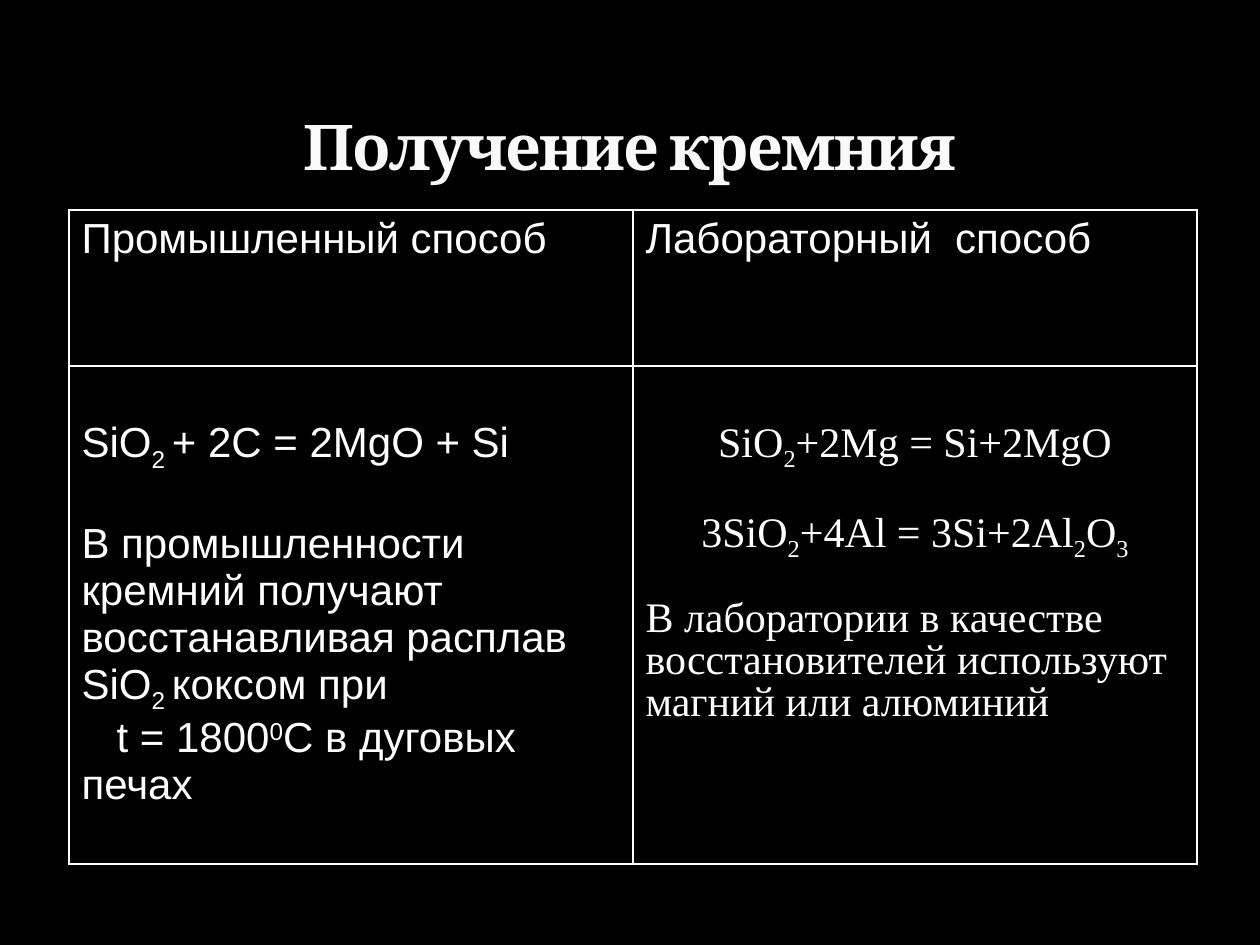
from dataclasses import dataclass

from lxml import etree
from pptx import Presentation
from pptx.dml.color import RGBColor
from pptx.enum.text import MSO_ANCHOR, PP_ALIGN
from pptx.oxml.ns import qn
from pptx.util import Emu, Pt

LEFT, CENTER = PP_ALIGN.LEFT, PP_ALIGN.CENTER
BOTTOM = MSO_ANCHOR.BOTTOM
PX = 914400 // 126
COLORS = {"background": "000000", "title": "F9F9F9", "text": "FFFFFF", "border": "FFFFFF"}
SUB, SUP = -25000, 30000
BORDER_PT = 1


@dataclass
class Para:
    runs: list  # plain strings or (text, baseline) pairs
    align: PP_ALIGN = LEFT
    before: int = 0
    spacing: float = 1.0
    indent: int = 0


@dataclass
class CellText:
    paras: list
    font: str = "Arial"
    top: int = 6


def px(n: int) -> Emu:
    return Emu(n * PX)


def color(name: str) -> RGBColor:
    return RGBColor.from_string(COLORS[name])


def add_run(p, text: str, *, font: str, size: int, fill: str, bold=False, baseline=0, spacing=0):
    r = p.add_run()
    r.text = text
    f = r.font
    f.name, f.size, f.bold = font, Pt(size), bold
    f.color.rgb = color(fill)
    rPr = r._r.get_or_add_rPr()
    if baseline:
        rPr.set("baseline", str(baseline))
    if spacing:
        rPr.set("spc", str(spacing))


def add_borders(cell) -> None:
    tcPr = cell._tc.get_or_add_tcPr()
    for i, side in enumerate(("lnL", "lnR", "lnT", "lnB")):
        ln = etree.Element(qn(f"a:{side}"), w=str(Pt(BORDER_PT)))
        fill = etree.SubElement(ln, qn("a:solidFill"))
        etree.SubElement(fill, qn("a:srgbClr"), val=COLORS["border"])
        tcPr.insert(i, ln)  # borders come before the fill


def fill_cell(cell, content: CellText) -> None:
    cell.fill.background()
    add_borders(cell)
    cell.margin_top = px(content.top)
    tf = cell.text_frame
    for i, para in enumerate(content.paras):
        p = tf.add_paragraph() if i else tf.paragraphs[0]
        p.alignment = para.align
        p.line_spacing = para.spacing
        if para.before:
            p.space_before = Pt(para.before)
        if para.indent:
            p._p.get_or_add_pPr().set("indent", str(px(para.indent)))
        for run in para.runs:
            text, baseline = (run, 0) if isinstance(run, str) else run
            add_run(p, text, font=content.font, size=24, fill="text", baseline=baseline)


INDUSTRIAL = CellText([
    Para(["SiO", ("2 ", SUB), "+ 2C = 2MgO + Si"]),
    Para(["В промышленности кремний получают восстанавливая расплав SiO",
          ("2 ", SUB), "коксом при"], before=27),
    Para(["t = 1800", ("0", SUP), "C в дуговых печах"], indent=35),
], top=54)

LABORATORY = CellText([
    Para(["SiO", ("2", SUB), "+2Mg = Si+2MgO"], CENTER, spacing=0.9),
    Para(["3SiO", ("2", SUB), "+4Al = 3Si+2Al", ("2", SUB), "O", ("3", SUB)],
         CENTER, before=24, spacing=0.9),
    Para(["В лаборатории в качестве восстановителей используют магний или алюминий"],
         before=24, spacing=0.9),
], font="Times New Roman", top=54)

ROWS = [
    [CellText([Para(["Промышленный способ"])]), CellText([Para(["Лабораторный  способ"])])],
    [INDUSTRIAL, LABORATORY],
]
ROW_HEIGHTS = [156, 498]
COL_WIDTH = 564


def main() -> None:
    prs = Presentation()
    prs.slide_width, prs.slide_height = px(1260), px(945)
    s = prs.slides.add_slide(prs.slide_layouts[5])
    s.background.fill.solid()
    s.background.fill.fore_color.rgb = color("background")

    # Title
    title = s.shapes.title
    title.left, title.top, title.width, title.height = px(63), px(21), px(1134), px(168)
    tf = title.text_frame
    tf.vertical_anchor = BOTTOM
    p = tf.paragraphs[0]
    p.alignment = CENTER
    add_run(p, "Получение кремния", font="Cambria", size=36, fill="title", bold=True, spacing=-100)

    # Table of methods
    table = s.shapes.add_table(len(ROWS), len(ROWS[0]), px(69), px(210),
                               px(COL_WIDTH * len(ROWS[0])), px(sum(ROW_HEIGHTS))).table
    table.first_row = table.horz_banding = False
    for col in table.columns:
        col.width = px(COL_WIDTH)
    for i, (height, row) in enumerate(zip(ROW_HEIGHTS, ROWS)):
        table.rows[i].height = px(height)
        for j, content in enumerate(row):
            fill_cell(table.cell(i, j), content)

    prs.save("out.pptx")


if __name__ == "__main__":
    main()
